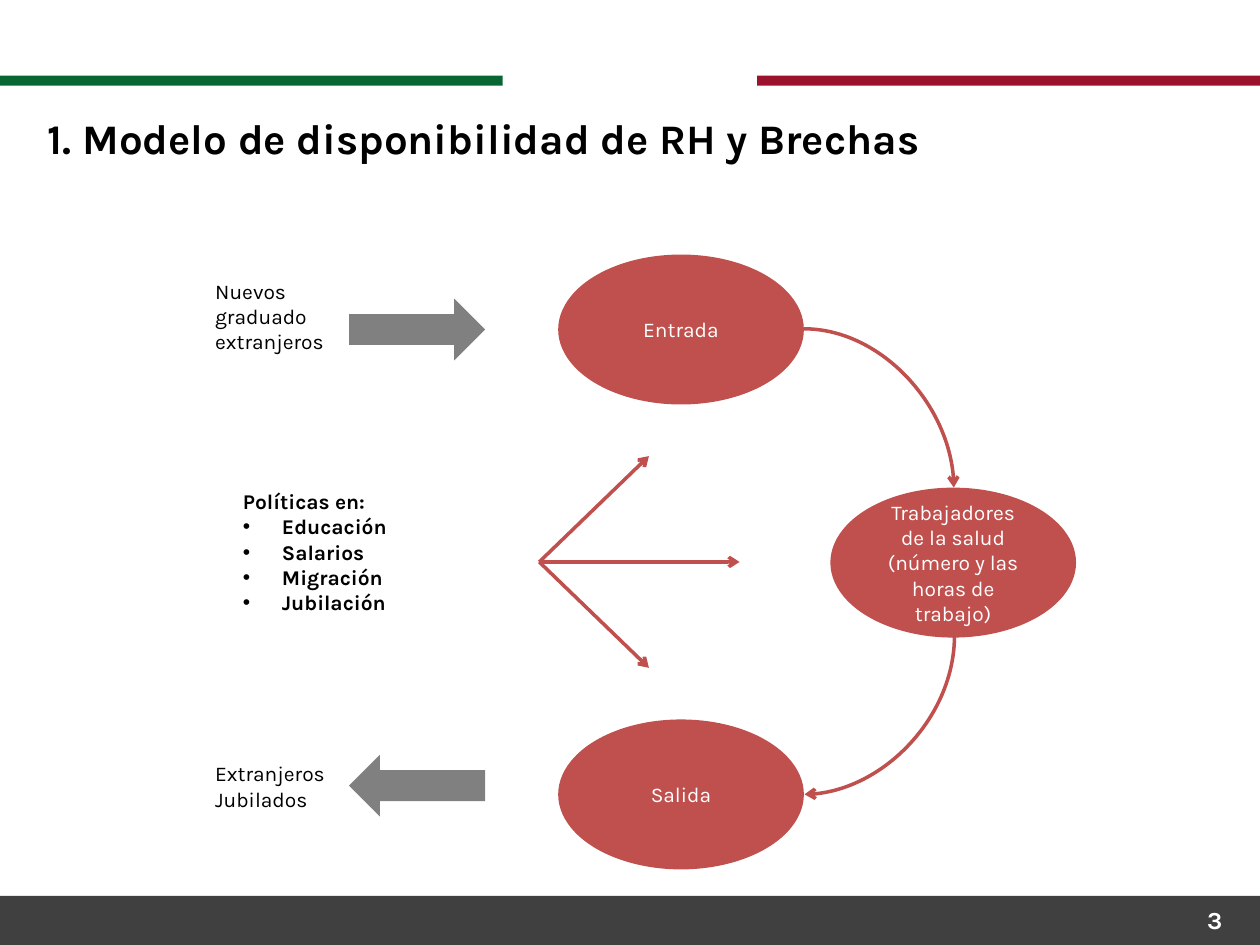
from lxml import etree
from pptx import Presentation
from pptx.dml.color import RGBColor
from pptx.enum.shapes import MSO_CONNECTOR, MSO_SHAPE
from pptx.enum.text import MSO_ANCHOR, PP_ALIGN
from pptx.oxml.ns import qn
from pptx.util import Inches, Pt

RECT, OVAL, ARROW = MSO_SHAPE.RECTANGLE, MSO_SHAPE.OVAL, MSO_SHAPE.LEFT_ARROW
LINE, CURVE = MSO_CONNECTOR.STRAIGHT, MSO_CONNECTOR.CURVE
LEFT, MID, RIGHT = PP_ALIGN.LEFT, PP_ALIGN.CENTER, PP_ALIGN.RIGHT
TOP, CENTER = MSO_ANCHOR.TOP, MSO_ANCHOR.MIDDLE
FONT, RED, GRAY, DARK = "Karla", "C0504D", "808080", "404040"
GREEN, WINE, BLACK, WHITE = "076632", "9B122D", "000000", "FFFFFF"


def color(code):
    return RGBColor.from_string(code)


class Board:
    """Draw styled elements on a slide with a grid of 100 columns by 75 rows."""

    def __init__(self, deck):
        self.slide = deck.slides.add_slide(deck.slide_layouts[6])
        self.cell = deck.slide_width / 100

    def grid(self, *marks):
        return [round(mark * self.cell) for mark in marks]

    def label(self, shape, text, size=12, tint=BLACK, bold=False, align=LEFT, anchor=TOP):
        frame = shape.text_frame
        frame.text = text
        frame.word_wrap = True
        frame.vertical_anchor = anchor
        for para in frame.paragraphs:
            para.alignment = align
            for run in para.runs:
                font = run.font
                font.name, font.size, font.bold = FONT, Pt(size), bold
                font.color.rgb = color(tint)

    def shape(self, kind, box, fill, turn=0):
        shape = self.slide.shapes.add_shape(kind, *self.grid(*box))
        shape.shadow.inherit = False
        shape.fill.solid()
        shape.fill.fore_color.rgb = color(fill)
        shape.line.fill.background()
        shape.rotation = turn
        return shape

    def oval(self, left, top, text):
        shape = self.shape(OVAL, (left, top, 19.5, 11.9), RED)
        self.label(shape, text, tint=WHITE, align=MID, anchor=CENTER)

    def text(self, box, text, **style):
        shape = self.slide.shapes.add_textbox(*self.grid(*box))
        self.label(shape, text, **style)
        return shape

    def list(self, box, head, items):
        shape = self.text(box, "\n".join([head, *items]), bold=True)
        for para in shape.text_frame.paragraphs[1:]:
            props = para._p.get_or_add_pPr()
            props.set("marL", str(Inches(0.31)))
            props.set("indent", str(-Inches(0.31)))
            etree.SubElement(props, qn("a:buFont")).set("typeface", "Arial")
            etree.SubElement(props, qn("a:buChar")).set("char", "•")

    def arrow(self, kind, start, end):
        link = self.slide.shapes.add_connector(kind, *self.grid(*start, *end))
        link.line.color.rgb = color(RED)
        link.line.width = Pt(2)
        props = link._element.spPr
        etree.SubElement(props.find(qn("a:ln")), qn("a:tailEnd")).set("type", "arrow")
        etree.SubElement(props, qn("a:effectLst"))
        return props

    def curve(self, start, end, turn=0):
        props = self.arrow(CURVE, start, end)
        props.find(qn("a:prstGeom")).set("prst", "curvedConnector2")
        props.find(qn("a:xfrm")).set("rot", str(turn * 60000))


def main():
    deck = Presentation()
    deck.slide_width, deck.slide_height = Inches(10), Inches(7.5)
    board = Board(deck)
    board.shape(RECT, (0, 71.1, 100, 3.9), DARK)
    for left, fill in ((0, GREEN), (60.1, WINE)):
        board.shape(RECT, (left, 6, 39.9, 0.8), fill)
    board.text((74.7, 71.3, 23.3, 4), "3", size=14, tint=WHITE, bold=True, align=RIGHT)
    board.text((2.8, 8.4, 89.8, 5.2), "1. Modelo de disponibilidad de RH y Brechas",
               size=24, bold=True)

    board.oval(44.3, 20.2, "Entrada")
    board.oval(65.9, 38.7, "Trabajadores de la salud (número y las horas de trabajo)")
    board.oval(44.3, 57.1, "Salida")
    for top, turn in ((23.7, 180), (59.9, 0)):
        board.shape(ARROW, (27.7, top, 10.8, 4.9), GRAY, turn)

    board.text((16.1, 21.6, 12.3, 6.3), "Nuevos graduado extranjeros")
    board.text((16.1, 59.9, 12.3, 4.5), "Extranjeros\nJubilados")
    board.list((18.3, 38.3, 17.3, 11.1), "Políticas en:",
               ("Educación", "Salarios", "Migración", "Jubilación"))

    for end in ((58.7, 44.6), (51.5, 36.2), (51.5, 53)):
        board.arrow(LINE, (42.8, 44.6), end)
    board.curve((63.8, 26.1), (75.7, 38.7))
    board.curve((63.5, 50.8), (76.1, 62.7), 90)
    deck.save("out.pptx")


if __name__ == "__main__":
    main()
